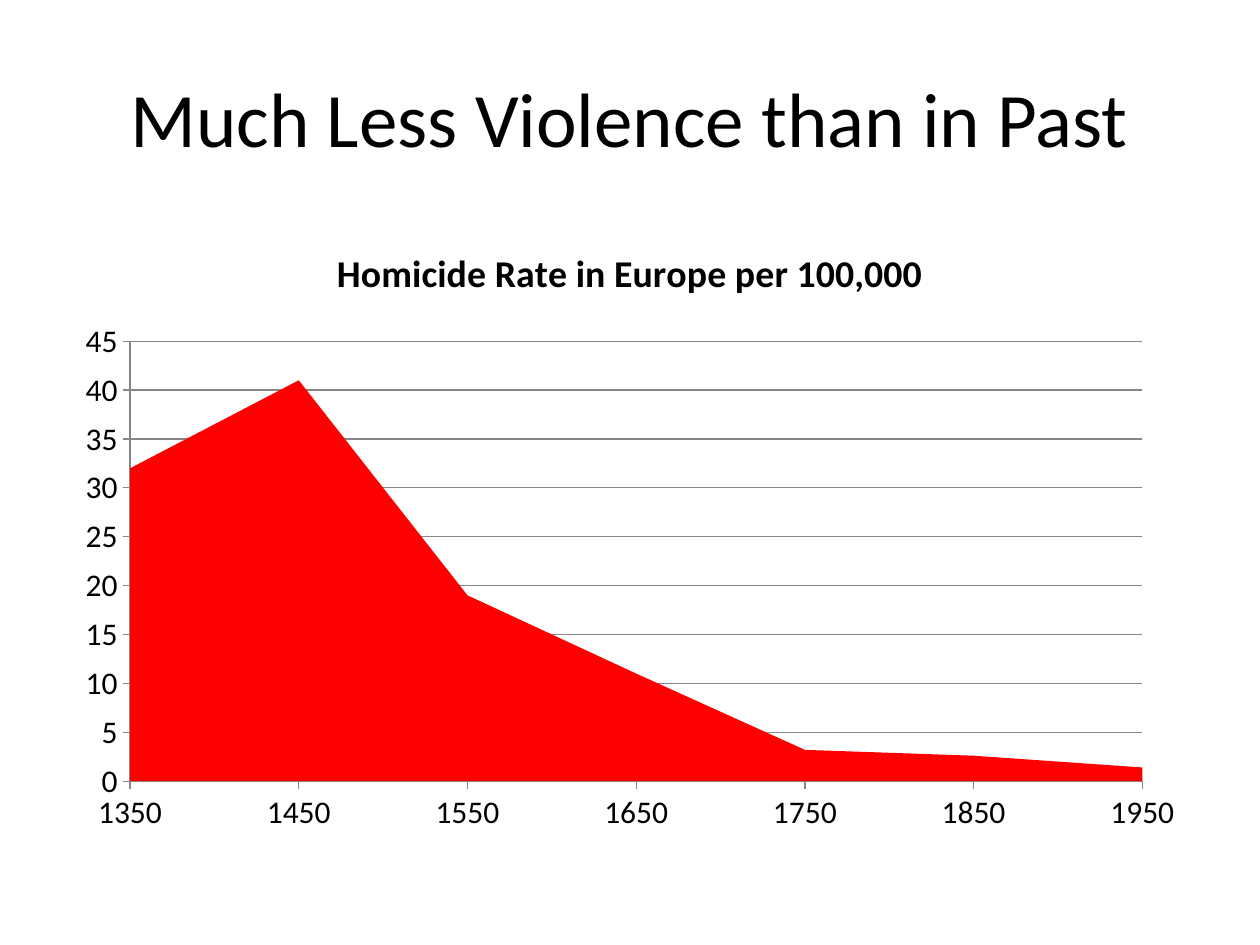
from pptx import Presentation
from pptx import util as u
from pptx.chart import data
from pptx.dml import color
from pptx.enum import chart as charts, text

COLORS = {"text": "000000", "area": "FF0000", "line": "868686", "background": "FFFFFF"}
FONT = "Calibri"
HOMICIDES = {1350: 32, 1450: 41, 1550: 19, 1650: 11, 1750: 3.2, 1850: 2.6, 1950: 1.4}


def rgb(name):
    return color.RGBColor.from_string(COLORS[name])


def style_font(font, size, bold=False):
    font.name = FONT
    font.size = u.Pt(size)
    font.bold = bold
    font.color.rgb = rgb("text")


def style_line(line):
    line.color.rgb = rgb("line")
    line.width = u.Pt(0.75)


def add_title(slide, left, top, width, height):
    box = slide.shapes.add_textbox(left, top, width, height)
    frame = box.text_frame
    frame.word_wrap = True
    frame.vertical_anchor = text.MSO_ANCHOR.MIDDLE
    paragraph = frame.paragraphs[0]
    paragraph.alignment = text.PP_ALIGN.CENTER
    run = paragraph.add_run()
    run.text = "Much Less Violence than in Past"
    style_font(run.font, 44)


def add_homicide_chart(slide, left, top, width, height):
    chart_data = data.CategoryChartData()
    chart_data.categories = [str(year) for year in HOMICIDES]
    chart_data.add_series("Series 1", HOMICIDES.values())
    chart = slide.shapes.add_chart(
        charts.XL_CHART_TYPE.AREA, left, top, width, height, chart_data
    ).chart
    style_font(chart.font, 18)
    chart.has_legend = False

    chart.has_title = True
    chart.chart_title.include_in_layout = False
    run = chart.chart_title.text_frame.paragraphs[0].add_run()
    run.text = "Homicide Rate in Europe per 100,000"
    style_font(run.font, 21.6, bold=True)

    plot = chart.plots[0]
    plot.vary_by_categories = False
    fill = plot.series[0].format.fill
    fill.solid()
    fill.fore_color.rgb = rgb("area")

    for axis in (chart.category_axis, chart.value_axis):
        axis.major_tick_mark = charts.XL_TICK_MARK.OUTSIDE
        axis.minor_tick_mark = charts.XL_TICK_MARK.NONE
        style_line(axis.format.line)
    chart.category_axis.has_major_gridlines = False
    values = chart.value_axis
    values.minimum_scale, values.maximum_scale, values.major_unit = 0, 45, 5
    values.has_major_gridlines = True
    style_line(values.major_gridlines.format.line)
    values.tick_labels.number_format = "General"
    values.tick_labels.number_format_is_linked = False
    for crossing in chart.element.xpath(".//c:valAx/c:crossBetween"):
        crossing.set("val", "midCat")


def main():
    presentation = Presentation()
    presentation.slide_width = u.Inches(10)
    presentation.slide_height = u.Inches(7.5)
    slide = presentation.slides.add_slide(presentation.slide_layouts[6])
    slide.background.fill.solid()
    slide.background.fill.fore_color.rgb = rgb("background")
    left, width = u.Inches(0.5), u.Inches(9)
    add_title(slide, left, u.Inches(0.3), width, u.Inches(1.25))
    add_homicide_chart(slide, left, u.Inches(1.75), width, u.Inches(4.95))
    presentation.save("out.pptx")


if __name__ == "__main__":
    main()
